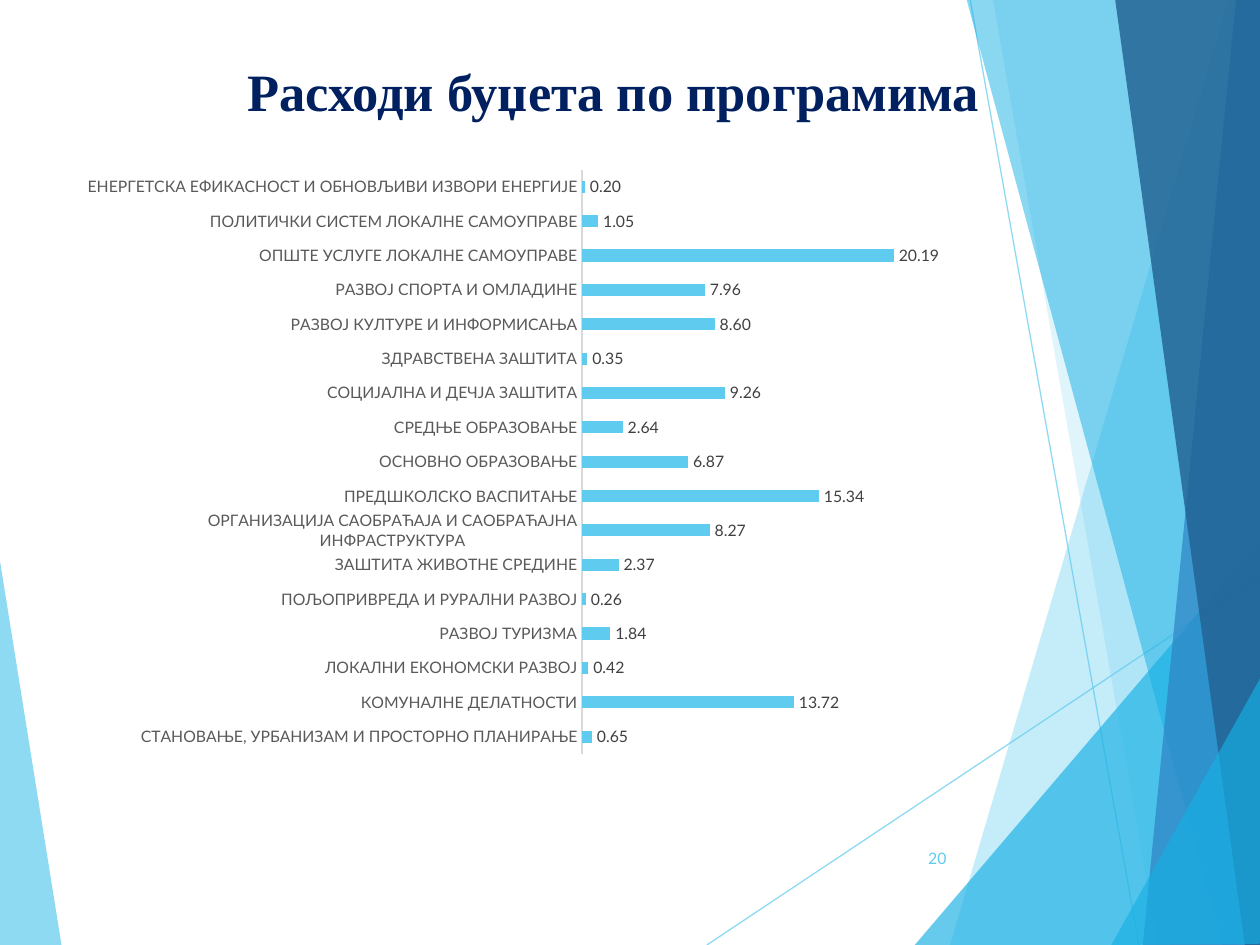
from typing import NamedTuple

from lxml.etree import SubElement
from pptx import Presentation
from pptx.chart.data import CategoryChartData
from pptx.dml.color import RGBColor
from pptx.enum.chart import XL_CHART_TYPE as Chart, XL_LABEL_POSITION as Pos
from pptx.enum.chart import XL_TICK_MARK as Tick
from pptx.enum.shapes import MSO_CONNECTOR as Conn
from pptx.enum.text import MSO_ANCHOR as Anchor, PP_ALIGN as Align
from pptx.oxml.ns import qn
from pptx.util import Inches, Pt

SKY = RGBColor(0x5F, 0xCB, 0xEF)
CYAN = RGBColor(0x17, 0xB0, 0xE4)
BLUE = RGBColor(0x2E, 0x83, 0xC3)
DEEP = RGBColor(0x22, 0x62, 0x92)
NAVY = RGBColor(0x00, 0x20, 0x60)
BLACK = RGBColor(0, 0, 0)
DARK = RGBColor(0x40, 0x40, 0x40)
GREY = RGBColor(0x59, 0x59, 0x59)
PALE = RGBColor(0xD9, 0xD9, 0xD9)
FONT = "Lato"


class Facet(NamedTuple):
    color: RGBColor
    alpha: int
    points: tuple


class Ray(NamedTuple):
    start: tuple
    end: tuple


class Label(NamedTuple):
    text: str
    box: tuple
    size: int
    font: str
    color: RGBColor
    bold: bool
    align: Align
    anchor: Anchor


RAYS = [Ray((5.61, 7.5), (10.01, 4.57)), Ray((7.7, 0), (9.04, 7.5))]
WEDGE = Facet(SKY, 70, ((-0.01, 4.39), (0.49, 7.51), (-0.01, 7.5)))
FACETS = [
    Facet(SKY, 36, ((9.75, 0), (7.54, 7.5), (10.02, 7.51), (10.01, 0.01))),
    Facet(SKY, 20, ((7.88, -0.01), (9.19, 7.5), (10.01, 7.5), (10.01, -0.01))),
    Facet(CYAN, 66, ((7.26, 7.5), (10, 4.29), (10.01, 7.5))),
    Facet(CYAN, 50, ((7.67, -0.01), (9.7, 7.5), (10.01, 7.49), (10.01, -0.01))),
    Facet(BLUE, 70, ((9.81, -0.01), (9.07, 7.5), (10.01, 7.5), (10, -0.01))),
    Facet(DEEP, 82, ((8.85, -0.01), (9.88, 7.5), (10.02, 7.5), (10, -0.01))),
    Facet(CYAN, 66, ((8.82, 7.5), (10.02, 5.35), (10.02, 7.49))),
]
LABELS = [
    Label("20", (7.05, 6.61, 0.56, 0.4), 9, FONT, SKY, False,
          Align.RIGHT, Anchor.MIDDLE),
    Label("Расходи буџета по програмима", (0.58, 0.42, 8.58, 0.61), 30,
          "Times New Roman", NAVY, True, Align.CENTER, Anchor.TOP),
]
COSTS = {
    "СТАНОВАЊЕ, УРБАНИЗАМ И ПРОСТОРНО ПЛАНИРАЊЕ": 0.65,
    "КОМУНАЛНЕ ДЕЛАТНОСТИ": 13.72,
    "ЛОКАЛНИ ЕКОНОМСКИ РАЗВОЈ": 0.42,
    "РАЗВОЈ ТУРИЗМА": 1.84,
    "ПОЉОПРИВРЕДА И РУРАЛНИ РАЗВОЈ": 0.26,
    "ЗАШТИТА ЖИВОТНЕ СРЕДИНЕ": 2.37,
    "ОРГАНИЗАЦИЈА САОБРАЋАЈА И САОБРАЋАЈНА ИНФРАСТРУКТУРА": 8.27,
    "ПРЕДШКОЛСКО ВАСПИТАЊЕ": 15.34,
    "ОСНОВНО ОБРАЗОВАЊЕ": 6.87,
    "СРЕДЊЕ ОБРАЗОВАЊЕ": 2.64,
    "СОЦИЈАЛНА И ДЕЧЈА ЗАШТИТА": 9.26,
    "ЗДРАВСТВЕНА ЗАШТИТА": 0.35,
    "РАЗВОЈ КУЛТУРЕ И ИНФОРМИСАЊА": 8.60,
    "РАЗВОЈ СПОРТА И ОМЛАДИНЕ": 7.96,
    "ОПШТЕ УСЛУГЕ ЛОКАЛНЕ САМОУПРАВЕ": 20.19,
    "ПОЛИТИЧКИ СИСТЕМ ЛОКАЛНЕ САМОУПРАВЕ": 1.05,
    "ЕНЕРГЕТСКА ЕФИКАСНОСТ И ОБНОВЉИВИ ИЗВОРИ ЕНЕРГИЈЕ": 0.20,
}


def fade(shape, alpha: int) -> None:
    tone = next(shape.element.spPr.iter(qn("a:srgbClr")))
    SubElement(tone, qn("a:alpha"), val=str(alpha * 1000))


def style(font, size: int, color: RGBColor, name: str = FONT) -> None:
    font.size, font.name = Pt(size), name
    font.color.rgb = color


def add_facet(shapes, facet: Facet) -> None:
    first, *rest = [(Inches(x), Inches(y)) for x, y in facet.points]
    pen = shapes.build_freeform(*first)
    pen.add_line_segments(rest, close=True)
    shape = pen.convert_to_shape()
    shape.shadow.inherit = False
    shape.fill.solid()
    shape.fill.fore_color.rgb = facet.color
    shape.line.fill.background()
    fade(shape, facet.alpha)


def add_ray(shapes, ray: Ray) -> None:
    ends = [Inches(v) for v in ray.start + ray.end]
    line = shapes.add_connector(Conn.STRAIGHT, *ends)
    line.line.color.rgb = SKY
    line.line.width = Pt(0.75)
    fade(line, 70)
    SubElement(line.element.spPr, qn("a:effectLst"))


def add_label(shapes, label: Label) -> None:
    frame = shapes.add_textbox(*map(Inches, label.box)).text_frame
    frame.word_wrap = True
    frame.vertical_anchor = label.anchor
    para = frame.paragraphs[0]
    para.alignment = label.align
    run = para.add_run()
    run.text = label.text
    style(run.font, label.size, label.color, label.font)
    run.font.bold = label.bold


def add_costs(shapes, costs: dict) -> None:
    data = CategoryChartData(number_format="0.00")
    data.categories = list(costs)
    data.add_series("Series 1", list(costs.values()))
    box = map(Inches, (0.55, 1.25, 7.28, 4.83))
    chart = shapes.add_chart(Chart.BAR_CLUSTERED, *box, data).chart
    chart.has_legend = chart.has_title = False
    style(chart.font, 10, BLACK)

    # Axes
    axis = chart.category_axis
    axis.major_tick_mark = axis.minor_tick_mark = Tick.NONE
    axis.has_major_gridlines = False
    axis.format.line.color.rgb = PALE
    axis.format.line.width = Pt(0.75)
    style(axis.tick_labels.font, 9, GREY)
    scale = chart.value_axis
    scale.visible = scale.has_major_gridlines = False
    scale.minimum_scale, scale.maximum_scale = 0, 25

    # Bars and values
    plot = chart.plots[0]
    plot.gap_width = 182
    plot.vary_by_categories = False
    bars = plot.series[0]
    bars.format.fill.solid()
    bars.format.fill.fore_color.rgb = SKY
    tags = bars.data_labels
    tags.show_value = True
    tags.number_format, tags.number_format_is_linked = "0.00", False
    tags.position = Pos.OUTSIDE_END
    style(tags.font, 9, DARK)


def main() -> None:
    deck = Presentation()
    deck.slide_width, deck.slide_height = Inches(10), Inches(7.5)
    shapes = deck.slides.add_slide(deck.slide_layouts[6]).shapes

    # Backdrop
    add_facet(shapes, WEDGE)
    for ray in RAYS:
        add_ray(shapes, ray)
    for facet in FACETS:
        add_facet(shapes, facet)

    # Page number, title and chart
    for label in LABELS:
        add_label(shapes, label)
    add_costs(shapes, COSTS)
    deck.save("out.pptx")


if __name__ == "__main__":
    main()
